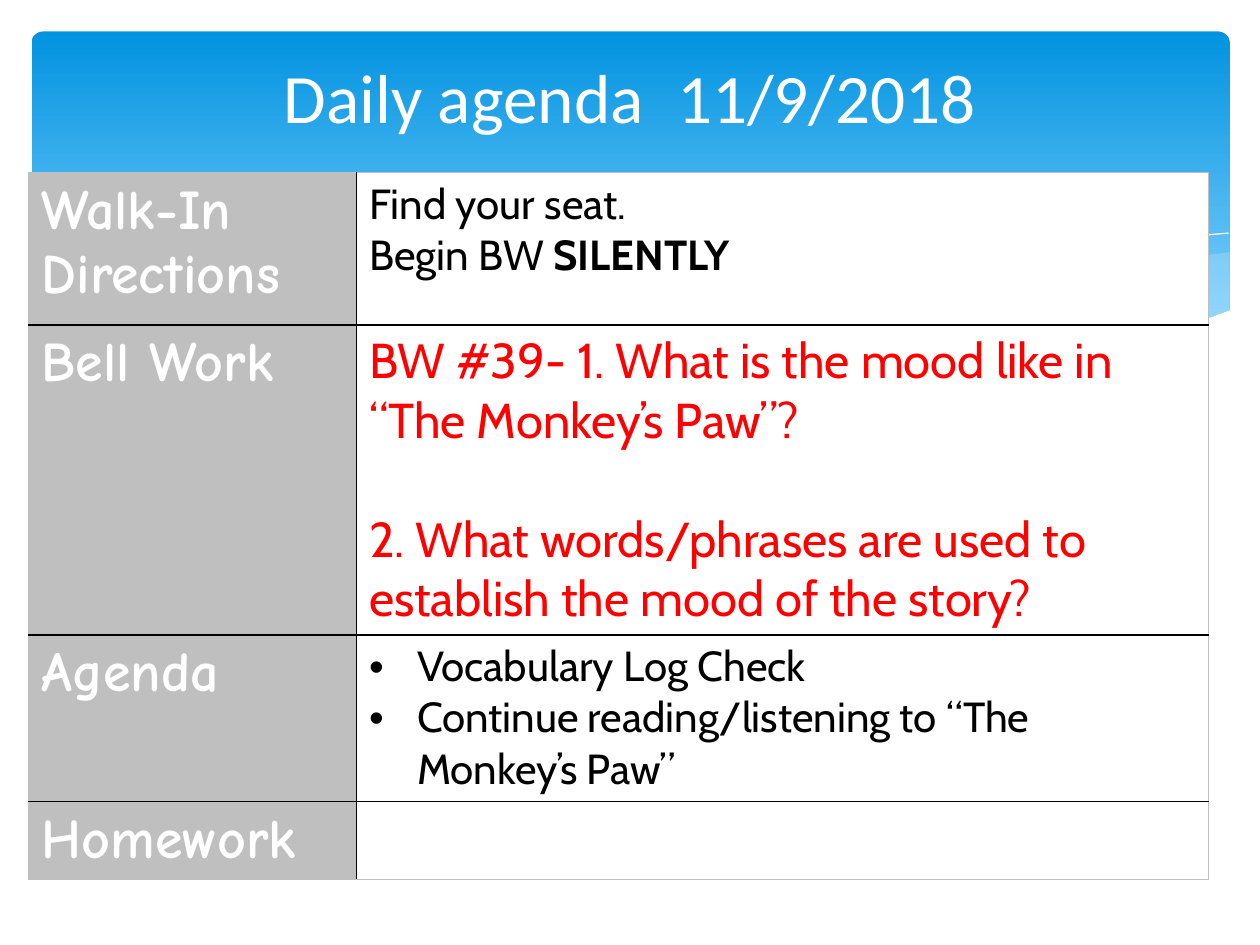
import pptx
import pptx.dml.color
import pptx.enum.shapes
import pptx.enum.text
import pptx.oxml
import pptx.oxml.ns
import pptx.util
from pptx.util import Inches

COLORS = {
    "sky": "0293E0", "pale_sky": "83D3FE", "mist": "C6E7FC", "white": "FFFFFF",
    "gray": "BFBFBF", "black": "000000", "red": "FF0000",
}
COLUMN_WIDTHS = (2.6, 6.76)
ROW_HEIGHTS = (1.21, 2.46, 1.32, 0.62)
LABELS = ("Walk-In Directions", "Bell Work", "Agenda", "Homework")
QUESTIONS = (
    "BW #39- 1. What is the mood like in “The Monkey’s Paw”?",
    "2. What words/phrases are used to establish the mood of the story?",
)
ACTIVITIES = ("Vocabulary Log Check", "Continue reading/listening to “The Monkey’s Paw”")

RIGHT_SWELL = (
    (9.76, 2), (9.48, 2.04), (9.21, 2.1), (8.91, 2.16), (8.61, 2.23), (8.05, 2.37),
    (7.53, 2.48), (7.06, 2.57), (6.61, 2.65), (6.91, 2.69), (7.19, 2.72), (7.45, 2.75),
    (7.81, 2.77), (8.14, 2.78), (8.44, 2.77), (8.72, 2.74), (8.97, 2.7), (9.21, 2.65),
    (9.49, 2.57), (9.76, 2.47),
)
MIDDLE_SWELL = (
    (8.93, 2.73), (8.66, 2.69), (8.07, 2.6), (7.41, 2.47), (6.68, 2.31), (6.29, 2.22),
    (5.98, 2.14), (5.69, 2.08), (5.28, 2), (4.89, 1.94), (4.42, 1.89), (3.99, 1.86),
    (3.61, 1.85), (3.28, 1.87), (2.86, 1.91), (3.23, 1.96), (3.62, 2.03), (4.04, 2.11),
    (4.49, 2.22), (4.91, 2.32), (5.66, 2.48), (6.18, 2.58), (6.65, 2.66), (7.09, 2.72),
    (7.48, 2.76), (7.85, 2.78), (8.28, 2.78), (8.67, 2.76),
)
LONG_CREST = (
    (3.09, 1.95), (3.28, 1.92), (3.53, 1.89), (3.87, 1.87), (4.33, 1.87), (4.89, 1.9),
    (5.33, 1.94), (5.82, 2), (6.36, 2.08), (6.95, 2.19), (7.6, 2.33), (8.31, 2.51),
    (9.07, 2.72),
)
SHORT_CREST = (
    (6.13, 2.57), (6.53, 2.46), (6.95, 2.35), (7.48, 2.23), (8.06, 2.1), (8.66, 1.99),
    (8.95, 1.94), (9.24, 1.9), (9.51, 1.87), (9.75, 1.85),
)
SHORE = (
    (9.77, 2.46), (9.5, 2.56), (9.2, 2.65), (8.87, 2.71), (8.5, 2.75), (8.09, 2.77),
    (7.61, 2.75), (7.08, 2.7), (6.48, 2.62), (5.79, 2.5), (5.03, 2.33), (4.47, 2.2),
    (3.91, 2.07), (3.4, 1.97), (2.92, 1.9), (2.5, 1.86), (2.11, 1.84), (1.61, 1.84),
    (1.19, 1.87), (0.85, 1.93), (0.52, 2.01), (0.23, 2.13), (0.23, 3.29), (9.77, 3.29),
)


def rgb(name):
    """Return the named colour."""
    return pptx.dml.color.RGBColor.from_string(COLORS[name])


def add_text(paragraph, text, size, font, color="black", bold=False):
    """Add one formatted run to a paragraph."""
    run = paragraph.add_run()
    run.text = text
    run.font.size = pptx.util.Pt(size)
    run.font.name = font
    run.font.bold = bold
    run.font.color.rgb = rgb(color)


def add_banner(slide):
    """Add the rounded gradient panel behind the title."""
    banner = slide.shapes.add_shape(
        pptx.enum.shapes.MSO_SHAPE.ROUNDED_RECTANGLE,
        Inches(0.25), Inches(0.25), Inches(9.51), Inches(2.7))
    banner.adjustments[0] = 0.034
    banner.shadow.inherit = False
    banner.line.fill.background()
    banner.fill.gradient()
    banner.fill.gradient_angle = 270
    stops = zip(banner.fill.gradient_stops, ("sky", "pale_sky"), (0, 0.9))
    for stop, color, position in stops:
        stop.color.rgb = rgb(color)
        stop.position = position


def add_wave(slide, points, fill=None, opacity=100):
    """Add a filled wave, or a thin white crest when no fill is given."""
    corners = [(Inches(x), Inches(y)) for x, y in points]
    builder = slide.shapes.build_freeform(*corners[0])
    builder.add_line_segments(corners[1:], close=fill is not None)
    wave = builder.convert_to_shape()
    wave.shadow.inherit = False
    if fill is None:
        wave.fill.background()
        wave.line.color.rgb = rgb("white")
        wave.line.width = 0
        return
    wave.line.fill.background()
    wave.fill.solid()
    wave.fill.fore_color.rgb = rgb(fill)
    if opacity < 100:
        tint = wave.fill._xPr.find(".//" + pptx.oxml.ns.qn("a:srgbClr"))
        tint.append(pptx.oxml.parse_xml(
            f'<a:alpha {pptx.oxml.ns.nsdecls("a")} val="{opacity * 1000}"/>'))


def add_title(slide):
    """Place and write the slide title."""
    title = slide.shapes.title
    title.left, title.top = Inches(0.5), Inches(0.37)
    title.width, title.height = Inches(9), Inches(1.37)
    frame = title.text_frame
    frame.margin_bottom = Inches(0.64)
    frame.vertical_anchor = pptx.enum.text.MSO_ANCHOR.MIDDLE
    heading = frame.paragraphs[0]
    heading.alignment = pptx.enum.text.PP_ALIGN.CENTER
    add_text(heading, "Daily agenda\t 11/9/2018", size=39.6, font="Calibri", color="white")
    slide.shapes._spTree.append(title._element)


def set_cell(cell, fill, edges):
    """Fill a cell and draw its borders, given as side and colour."""
    properties = cell._tc.get_or_add_tcPr()
    for side, color in edges.items():
        properties.append(pptx.oxml.parse_xml(
            f'<a:ln{side} {pptx.oxml.ns.nsdecls("a")} w="12700"><a:solidFill>'
            f'<a:srgbClr val="{COLORS[color]}"/></a:solidFill></a:ln{side}>'))
    cell.fill.solid()
    cell.fill.fore_color.rgb = rgb(fill)


def set_bullet(paragraph):
    """Give a paragraph a round bullet and a hanging indent."""
    properties = paragraph._p.get_or_add_pPr()
    properties.set("marL", str(Inches(0.38)))
    properties.set("indent", str(-Inches(0.38)))
    properties.append(pptx.oxml.parse_xml(
        f'<a:buFont {pptx.oxml.ns.nsdecls("a")} typeface="Arial"/>'))
    properties.append(pptx.oxml.parse_xml(
        f'<a:buChar {pptx.oxml.ns.nsdecls("a")} char="•"/>'))


def write_lines(cell, lines, **text_format):
    """Write one paragraph for each line and return the paragraphs."""
    frame = cell.text_frame
    paragraphs = [frame.paragraphs[0]] + [frame.add_paragraph() for _ in lines[1:]]
    for paragraph, line in zip(paragraphs, lines):
        add_text(paragraph, line, **text_format)
    return paragraphs


def add_agenda(slide):
    """Add the agenda grid and its wording."""
    frame = slide.shapes.add_table(
        len(ROW_HEIGHTS), len(COLUMN_WIDTHS), Inches(0.23), Inches(1.37),
        Inches(sum(COLUMN_WIDTHS)), Inches(sum(ROW_HEIGHTS)))
    agenda = frame.table
    agenda.first_row = agenda.horz_banding = False
    for column, width in zip(agenda.columns, COLUMN_WIDTHS):
        column.width = Inches(width)
    last = len(ROW_HEIGHTS) - 1
    for index, height in enumerate(ROW_HEIGHTS):
        agenda.rows[index].height = Inches(height)
        label, details = agenda.cell(index, 0), agenda.cell(index, 1)
        top = "gray" if index == 0 else "black"
        bottom = "gray" if index == last else "black"
        set_cell(label, "gray", {"L": "gray", "R": "black", "T": top, "B": bottom})
        set_cell(details, "white", {"L": "black", "R": "gray", "T": top, "B": bottom})
        write_lines(label, [LABELS[index]], size=32, font="Comic Neue",
                    color="white", bold=True)

    directions = write_lines(agenda.cell(0, 1), ("Find your seat.", "Begin BW "),
                             size=24, font="Cabin")
    add_text(directions[1], "SILENTLY", size=24, font="Cabin", bold=True)
    questions = write_lines(agenda.cell(1, 1), QUESTIONS, size=28, font="Cabin", color="red")
    questions[0].space_after = pptx.util.Pt(34)
    for activity in write_lines(agenda.cell(2, 1), ACTIVITIES, size=24, font="Cabin"):
        set_bullet(activity)


def main():
    """Build and save the slide."""
    deck = pptx.Presentation()
    deck.slide_width, deck.slide_height = Inches(10), Inches(7.5)
    slide = deck.slides.add_slide(deck.slide_layouts[5])
    add_banner(slide)
    add_wave(slide, RIGHT_SWELL, fill="mist", opacity=29)
    add_wave(slide, MIDDLE_SWELL, fill="mist", opacity=40)
    add_wave(slide, LONG_CREST)
    add_wave(slide, SHORT_CREST)
    add_wave(slide, SHORE, fill="white")
    add_title(slide)
    add_agenda(slide)
    deck.save("out.pptx")


if __name__ == "__main__":
    main()
